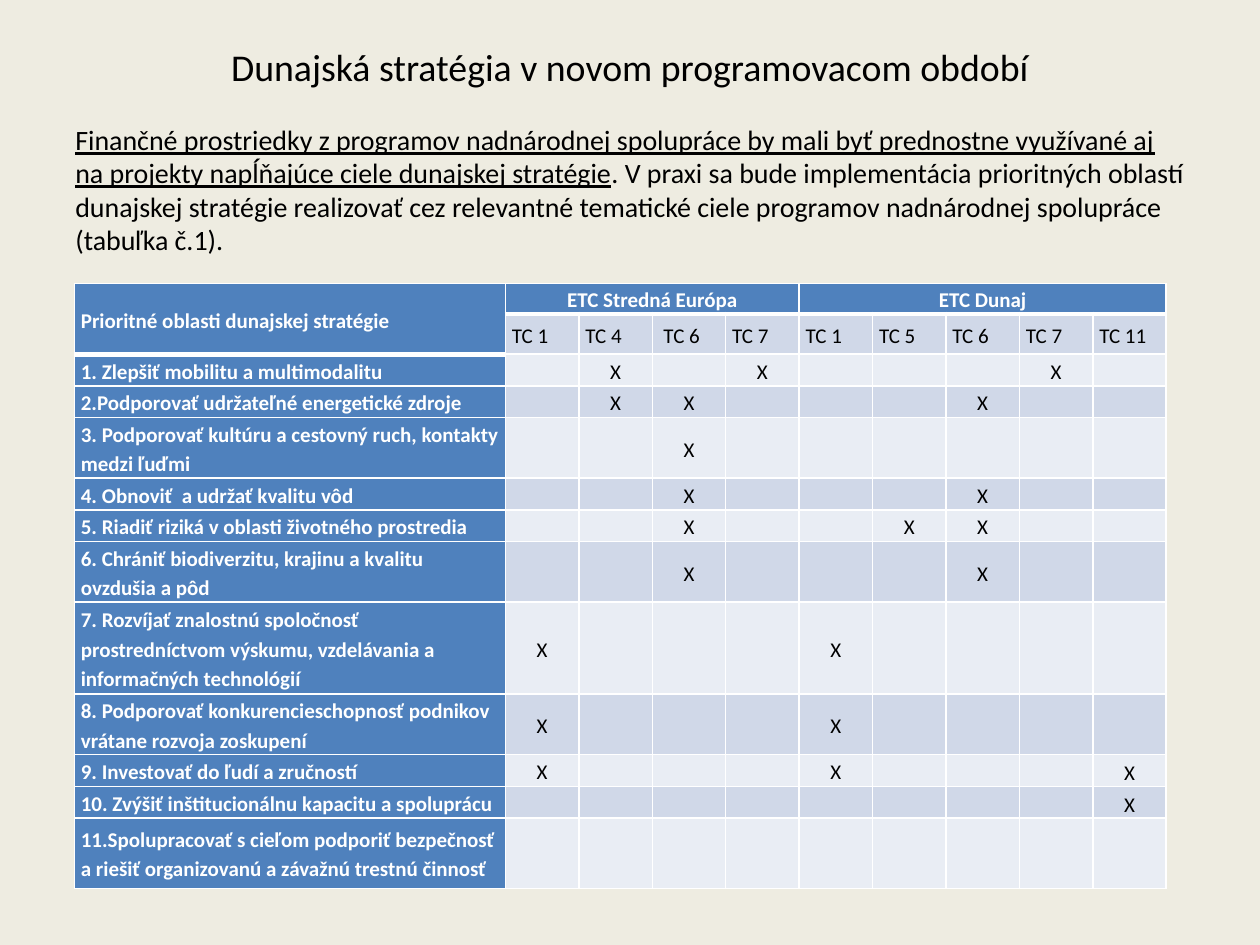
from lxml.etree import SubElement
from pptx import Presentation
from pptx.dml.color import RGBColor
from pptx.enum.text import MSO_ANCHOR as Anchor, PP_ALIGN as Align
from pptx.oxml.ns import qn
from pptx.util import Cm, Pt

COLORS = {
    "background": "EEECE1",
    "header": "4F81BD",
    "dark_band": "D0D8E8",
    "light_band": "E9EDF4",
    "text": "000000",
    "white": "FFFFFF",
}
FONT = "Calibri"
LABEL_WIDTH, GOAL_WIDTH = 8.69, 1.48
HEADER_HEIGHTS = [0.61, 0.81]

TITLE = "Dunajská stratégia v novom programovacom období"
KEY_MESSAGE = (
    "Finančné prostriedky z programov nadnárodnej spolupráce by mali byť "
    "prednostne využívané aj na projekty napĺňajúce ciele dunajskej stratégie"
)
EXPLANATION = (
    ". V praxi sa bude implementácia prioritných oblastí dunajskej stratégie "
    "realizovať cez relevantné tematické ciele programov nadnárodnej spolupráce "
    "(tabuľka č.1)."
)
AREAS_HEADING = "Prioritné oblasti dunajskej stratégie"
PROGRAMMES = [("ETC Stredná Európa", 1, 4), ("ETC Dunaj", 5, 9)]
GOALS = ["TC 1", "TC 4", " TC 6", "TC 7", "TC 1", "TC 5", "TC 6", "TC 7", "TC 11"]
LAST_GOAL = len(GOALS)
PRIORITIES = [
    ("1. Zlepšiť mobilitu a multimodalitu", 0.64, {2, 4, 8}),
    ("2.Podporovať udržateľné energetické zdroje", 0.64, {2, 3, 7}),
    ("3. Podporovať kultúru a cestovný ruch, kontakty medzi ľuďmi", 1.22, {3}),
    ("4. Obnoviť  a udržať kvalitu vôd", 0.64, {3, 7}),
    ("5. Riadiť riziká v oblasti životného prostredia", 0.64, {3, 6, 7}),
    ("6. Chrániť biodiverzitu, krajinu a kvalitu ovzdušia a pôd", 1.22, {3, 7}),
    ("7. Rozvíjať znalostnú spoločnosť prostredníctvom výskumu, vzdelávania "
     "a informačných technológií", 1.85, {1, 5}),
    ("8. Podporovať konkurencieschopnosť podnikov vrátane rozvoja zoskupení",
     1.22, {1, 5}),
    ("9. Investovať do ľudí a zručností", 0.64, {1, 5, 9}),
    ("10. Zvýšiť inštitucionálnu kapacitu a spoluprácu", 0.64, {9}),
    ("11.Spolupracovať s cieľom podporiť bezpečnosť a riešiť organizovanú "
     "a závažnú trestnú činnosť", 1.42, set()),
]


def rgb(name):
    return RGBColor.from_string(COLORS[name])


def set_font(font, size, color="text", bold=False):
    font.name = FONT
    font.size = Pt(size)
    font.bold = bold
    font.color.rgb = rgb(color)


def add_title(slide):
    title = slide.shapes.title
    title.left, title.top, title.width, title.height = Cm(1.27), Cm(0.76), Cm(22.86), Cm(1.17)
    title.text_frame.vertical_anchor = Anchor.MIDDLE
    heading = title.text_frame.paragraphs[0]
    heading.text = TITLE
    heading.alignment = Align.CENTER
    set_font(heading.font, 21.6)


def add_introduction(slide):
    frame = slide.shapes.add_textbox(Cm(1.27), Cm(2.34), Cm(22.86), Cm(15.6)).text_frame
    frame.word_wrap = True
    introduction = frame.paragraphs[0]
    introduction.space_before = Pt(3.2)
    set_font(introduction.font, 16)
    for text, underlined in ((KEY_MESSAGE, True), (EXPLANATION, False)):
        run = introduction.add_run()
        run.text = text
        run.font.underline = underlined


def set_borders(cell, row, col):
    header_end = 1 if col == 0 else 0
    widths = {
        "a:lnL": 1,
        "a:lnR": 1,
        "a:lnT": 3 if row == header_end + 1 else 1,
        "a:lnB": 3 if row == header_end else 1,
    }
    properties = cell._tc.get_or_add_tcPr()
    for side, width in widths.items():
        line = SubElement(properties, qn(side), w=str(Pt(width)))
        fill = SubElement(line, qn("a:solidFill"))
        SubElement(fill, qn("a:srgbClr"), val=COLORS["white"])


def format_cell(cell, row, col):
    is_header = row == 0 or col == 0
    band = "light_band" if row % 2 == 0 else "dark_band"
    set_borders(cell, row, col)
    cell.fill.solid()
    cell.fill.fore_color.rgb = rgb("header" if is_header else band)
    cell.margin_left = cell.margin_right = Cm(0.13)
    cell.margin_top = cell.margin_bottom = 0
    cell.vertical_anchor = Anchor.BOTTOM if row > 1 and col == LAST_GOAL else Anchor.MIDDLE

    paragraph = cell.text_frame.paragraphs[0]
    paragraph.line_spacing = 1.15
    if col == 0:
        paragraph.alignment = Align.JUSTIFY if row == 0 else Align.LEFT
    else:
        paragraph.alignment = Align.JUSTIFY if row == 1 else Align.CENTER
    set_font(paragraph.font, 12, "white" if is_header else "text", is_header)
    if not cell.text:
        SubElement(paragraph._p, qn("a:endParaRPr"), sz="1200")


def add_priority_table(slide):
    heights = HEADER_HEIGHTS + [height for _, height, _ in PRIORITIES]
    widths = [LABEL_WIDTH] + [GOAL_WIDTH] * LAST_GOAL
    table = slide.shapes.add_table(
        len(heights), len(widths), Cm(1.5), Cm(5.72), Cm(sum(widths)), Cm(sum(heights))
    ).table
    for column, width in zip(table.columns, widths):
        column.width = Cm(width)
    for table_row, height in zip(table.rows, heights):
        table_row.height = Cm(height)

    table.cell(0, 0).text = AREAS_HEADING
    table.cell(0, 0).merge(table.cell(1, 0))
    for programme, first, last in PROGRAMMES:
        table.cell(0, first).text = programme
        table.cell(0, first).merge(table.cell(0, last))
    for col, goal in enumerate(GOALS, 1):
        table.cell(1, col).text = goal
    for row, (priority, _, marked_goals) in enumerate(PRIORITIES, 2):
        table.cell(row, 0).text = priority
        for col in marked_goals:
            table.cell(row, col).text = "X"

    for row in range(len(heights)):
        for col in range(len(widths)):
            format_cell(table.cell(row, col), row, col)


def main():
    presentation = Presentation()
    presentation.slide_width, presentation.slide_height = Cm(25.4), Cm(19.05)
    slide = presentation.slides.add_slide(presentation.slide_layouts[5])
    slide.background.fill.solid()
    slide.background.fill.fore_color.rgb = rgb("background")
    add_title(slide)
    add_introduction(slide)
    add_priority_table(slide)
    presentation.save("out.pptx")


if __name__ == "__main__":
    main()
